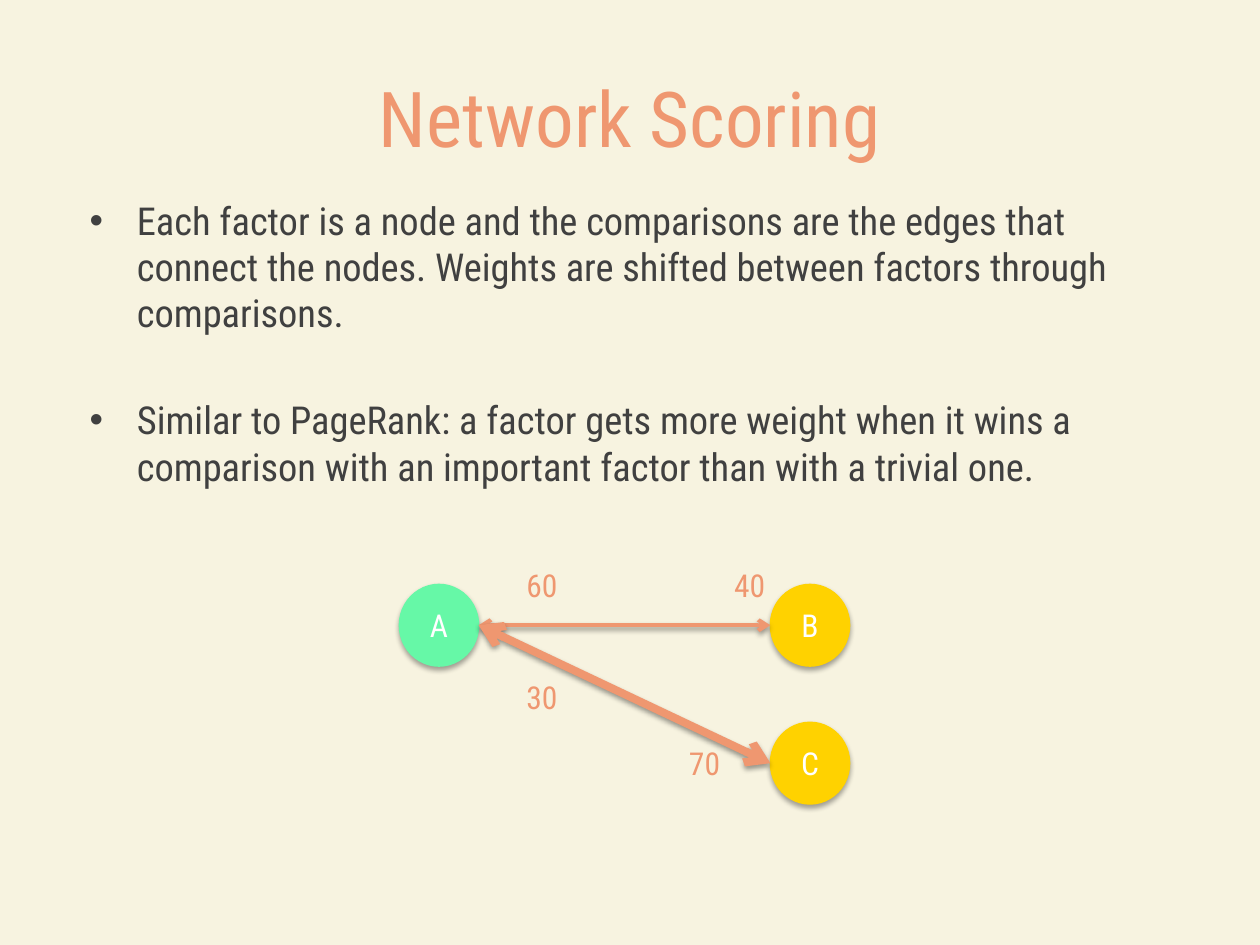
import pptx
import pptx.dml.color
import pptx.enum.shapes
import pptx.enum.text
import pptx.oxml
import pptx.oxml.ns
import pptx.util

Cm = pptx.util.Cm
Pt = pptx.util.Pt
ALIGN = pptx.enum.text.PP_ALIGN
ANCHOR = pptx.enum.text.MSO_ANCHOR
CORAL, GOLD, MINT = "EF9770", "FFD200", "66F8A7"


def add_run(p, text, size, color):
    r = p.add_run()
    r.text = text
    r.font.name = "Roboto Condensed"
    r.font.size = Pt(size)
    r.font.color.rgb = pptx.dml.color.RGBColor.from_string(color)


def style_outline(sp, color, width, dist, alpha):
    sp.line.color.rgb = pptx.dml.color.RGBColor.from_string(color)
    sp.line.width = Pt(width)
    sp._element.spPr.append(pptx.oxml.parse_xml(
        f'<a:effectLst {pptx.oxml.ns.nsdecls("a")}>'
        f'<a:outerShdw blurRad="{Pt(3.1)}" dist="{Pt(dist)}" dir="5400000" rotWithShape="0">'
        f'<a:srgbClr val="000000"><a:alpha val="{alpha * 1000}"/></a:srgbClr>'
        '</a:outerShdw></a:effectLst>'))


prs = pptx.Presentation()
prs.slide_width, prs.slide_height = Cm(25.4), Cm(19.05)
s = prs.slides.add_slide(prs.slide_layouts[5])
s.background.fill.solid()
s.background.fill.fore_color.rgb = pptx.dml.color.RGBColor.from_string("F7F3E0")

title = s.shapes.title
title.left, title.top, title.width, title.height = Cm(1.27), Cm(0.76), Cm(22.86), Cm(3.18)
title.text_frame.vertical_anchor = ANCHOR.MIDDLE
p = title.text_frame.paragraphs[0]
p.alignment = ALIGN.CENTER
add_run(p, "Network Scoring", 44, CORAL)

tf = s.shapes.add_textbox(Cm(1.4), Cm(3.84), Cm(22.86), Cm(8.99)).text_frame
tf.word_wrap = True
bullets = [
    ("Each factor is a node and the comparisons are the edges that connect the nodes. "
     "Weights are shifted between factors through comparisons.", 4.4),
    ("Similar to PageRank: a factor gets more weight when it wins a comparison "
     "with an important factor than with a trivial one.", 35),
]
for i, (text, gap) in enumerate(bullets):
    p = tf.add_paragraph() if i else tf.paragraphs[0]
    p.space_before = Pt(gap)
    pPr = p._p.get_or_add_pPr()
    pPr.set("marL", str(Cm(1.11)))
    pPr.set("indent", str(Cm(-0.95)))
    ns = pptx.oxml.ns.nsdecls("a")
    pPr.append(pptx.oxml.parse_xml(f'<a:buFont {ns} typeface="Arial"/>'))
    pPr.append(pptx.oxml.parse_xml(f'<a:buChar {ns} char="•"/>'))
    add_run(p, text, 22, "404040")

node_w, node_h = 1.6, 1.65
left_x, right_x, top_y, low_y = 8.05, 15.53, 11.78, 14.56
network = s.shapes.add_group_shape()

for name, x, y, color in [("A", left_x, top_y, MINT),
                          ("B", right_x, top_y, GOLD),
                          ("C", right_x, low_y, GOLD)]:
    sp = network.shapes.add_shape(pptx.enum.shapes.MSO_SHAPE.OVAL,
                                  Cm(x), Cm(y), Cm(node_w), Cm(node_h))
    sp.fill.solid()
    sp.fill.fore_color.rgb = pptx.dml.color.RGBColor.from_string(color)
    style_outline(sp, color, 0.75, 1.8, 35)
    sp.text_frame.vertical_anchor = ANCHOR.MIDDLE
    p = sp.text_frame.paragraphs[0]
    p.alignment = ALIGN.CENTER
    add_run(p, name, 18, "FFFFFF")

for end_y, width in [(top_y, 2.25), (low_y, 4.5)]:
    edge = network.shapes.add_connector(
        pptx.enum.shapes.MSO_CONNECTOR.STRAIGHT,
        Cm(left_x + node_w), Cm(top_y + node_h / 2),
        Cm(right_x), Cm(end_y + node_h / 2))
    style_outline(edge, CORAL, width, 1.6, 38)
    for end in ("headEnd", "tailEnd"):
        edge.line._get_or_add_ln().append(pptx.oxml.parse_xml(
            f'<a:{end} {pptx.oxml.ns.nsdecls("a")} type="arrow"/>'))

for weight, x, y in [("60", 10.36, 11.28), ("40", 14.55, 11.28),
                     ("70", 13.64, 14.88), ("30", 10.36, 13.54)]:
    tf = s.shapes.add_textbox(Cm(x), Cm(y), Cm(1.17), Cm(1.02)).text_frame
    tf.word_wrap = False
    tf.auto_size = pptx.enum.text.MSO_AUTO_SIZE.SHAPE_TO_FIT_TEXT
    add_run(tf.paragraphs[0], weight, 18, CORAL)

prs.save("out.pptx")
